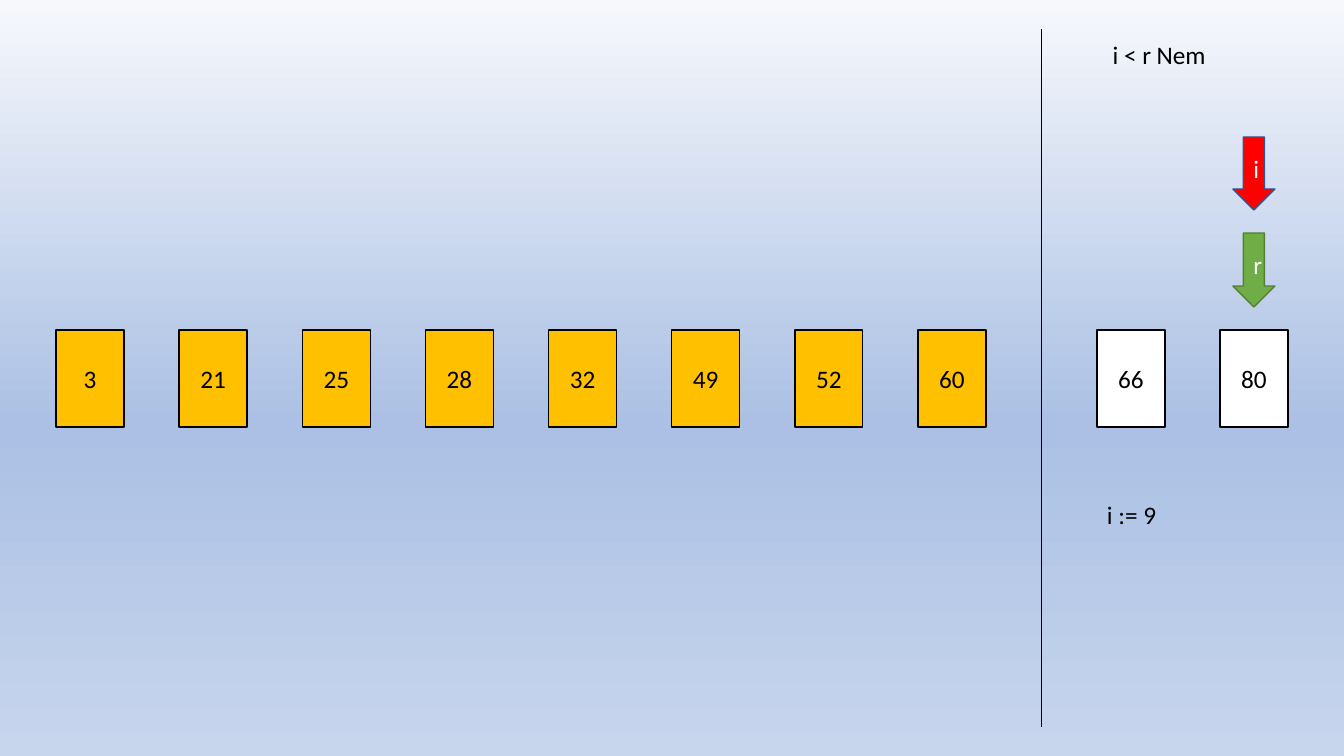
"""Build a sorting step slide: sorted values, a divider and the i and r markers."""
from copy import deepcopy

from lxml import etree
from pptx import Presentation
from pptx.dml.color import RGBColor
from pptx.enum.shapes import MSO_CONNECTOR, MSO_SHAPE
from pptx.enum.text import MSO_ANCHOR, MSO_AUTO_SIZE, PP_ALIGN
from pptx.oxml.ns import qn
from pptx.util import Pt

RECTANGLE, DOWN_ARROW = MSO_SHAPE.RECTANGLE, MSO_SHAPE.DOWN_ARROW
STRAIGHT = MSO_CONNECTOR.STRAIGHT
CENTER, LEFT = PP_ALIGN.CENTER, PP_ALIGN.LEFT
MIDDLE, FIT = MSO_ANCHOR.MIDDLE, MSO_AUTO_SIZE.SHAPE_TO_FIT_TEXT

COLORS = {
    "black": "000000", "white": "FFFFFF", "amber": "FFC000",
    "red": "FF0000", "navy": "325491", "green": "70AD47", "moss": "538035",
    "sky_top": "F6F8FC", "sky_middle": "ABC0E4", "sky_bottom": "C7D5ED",
}
BACKGROUND = [(0, "sky_top"), (0.56, "sky_middle"), (1, "sky_bottom")]
GROUPS = [
    ("amber", 56, 918, ["3", "21", "25", "28", "32", "49", "52", "60"]),
    ("white", 1097, 1220, ["66", "80"]),
]
MARKERS = [("r", "green", "moss", 233, 74), ("i", "red", "navy", 137, 73)]
NOTES = [("i := 9", 494, 162), (" i < r Nem", 34, 218)]

PAGE_WIDTH, PAGE_HEIGHT = 1344, 756
CARD_TOP, CARD_WIDTH, CARD_HEIGHT = 330, 68, 97
MARKER_WIDTH = 42
DIVIDER_X, DIVIDER_MARGIN = 1041, 29
NOTE_LEFT, NOTE_HEIGHT = 1097, 41
FONT = {"name": "Calibri", "size": Pt(18)}


def px(length):
    return round(length * 12192000 / PAGE_WIDTH)


def color(name):
    return RGBColor.from_string(COLORS[name])


def write(shape, text, ink, align):
    shape.text_frame.word_wrap = True
    para = shape.text_frame.paragraphs[0]
    para.alignment = align
    span = para.add_run()
    span.text = text
    for name, value in FONT.items():
        setattr(span.font, name, value)
    span.font.color.rgb = color(ink)


def add_label(page, kind, place, text, fill, line, ink):
    shape = page.shapes.add_shape(kind, *map(px, place))
    shape.shadow.inherit = False
    shape.fill.solid()
    shape.fill.fore_color.rgb = color(fill)
    shape.line.color.rgb = color(line)
    shape.line.width = Pt(1)
    shape.text_frame.vertical_anchor = MIDDLE
    write(shape, text, ink, CENTER)


def paint_background(page):
    fill = page.background.fill
    fill.gradient()
    fill.gradient_angle = 270
    stop_list = page.element.find(".//" + qn("a:gsLst"))
    stop_list.append(deepcopy(stop_list[-1]))
    for stop, (position, name) in zip(fill.gradient_stops, BACKGROUND):
        stop.position = position
        stop.color.rgb = color(name)


def add_divider(page):
    ends = (DIVIDER_X, DIVIDER_MARGIN, DIVIDER_X, PAGE_HEIGHT - DIVIDER_MARGIN)
    divider = page.shapes.add_connector(STRAIGHT, *map(px, ends))
    divider.line.color.rgb = color("black")
    divider.line.width = Pt(0.5)
    etree.SubElement(divider.element.spPr, qn("a:effectLst"))


def main():
    deck = Presentation()
    deck.slide_width, deck.slide_height = px(PAGE_WIDTH), px(PAGE_HEIGHT)
    page = deck.slides.add_slide(deck.slide_layouts[6])
    paint_background(page)

    for fill, first, last, values in GROUPS:
        pitch = (last - first) / (len(values) - 1)
        for index, value in enumerate(values):
            place = (first + index * pitch, CARD_TOP, CARD_WIDTH, CARD_HEIGHT)
            add_label(page, RECTANGLE, place, value, fill, "black", "black")

    marker_left = GROUPS[-1][2] + (CARD_WIDTH - MARKER_WIDTH) / 2
    for text, fill, line, top, height in MARKERS:
        place = (marker_left, top, MARKER_WIDTH, height)
        add_label(page, DOWN_ARROW, place, text, fill, line, "white")

    add_divider(page)
    for text, top, width in NOTES:
        place = (NOTE_LEFT, top, width, NOTE_HEIGHT)
        box = page.shapes.add_textbox(*map(px, place))
        box.text_frame.auto_size = FIT
        write(box, text, "black", LEFT)

    deck.save("out.pptx")


if __name__ == "__main__":
    main()
